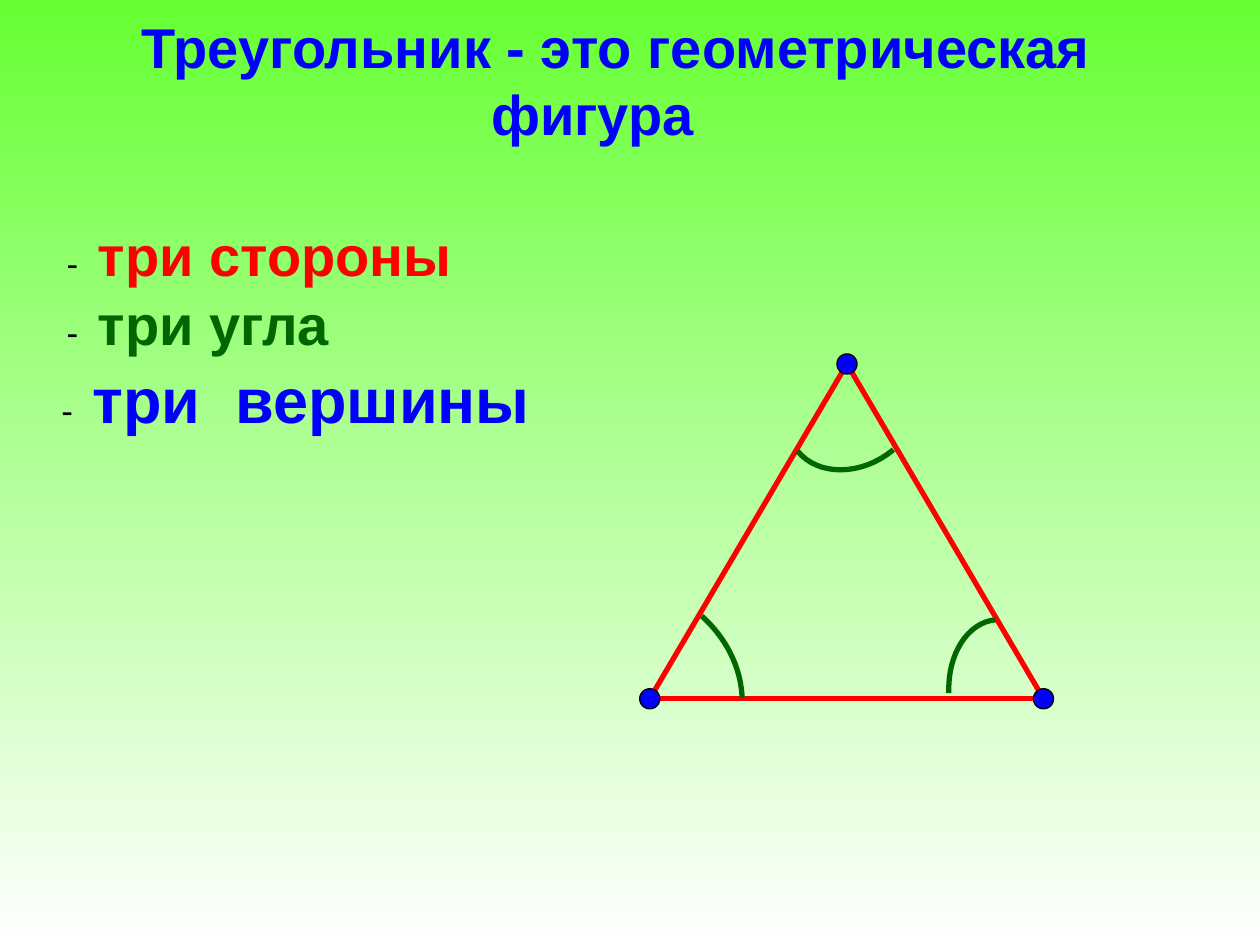
from pptx import Presentation
from pptx.dml.color import RGBColor
from pptx.enum.shapes import MSO_CONNECTOR, MSO_SHAPE
from pptx.enum.text import MSO_ANCHOR, MSO_AUTO_SIZE, PP_ALIGN
from pptx.oxml.xmlchemy import OxmlElement
from pptx.util import Pt

STRAIGHT = MSO_CONNECTOR.STRAIGHT
DOT = MSO_SHAPE.FLOWCHART_CONNECTOR
MIDDLE = MSO_ANCHOR.MIDDLE
FIT_SHAPE = MSO_AUTO_SIZE.SHAPE_TO_FIT_TEXT
CENTER = PP_ALIGN.CENTER

FONT = "Arial"
RED, GREEN, BLUE, BLACK = "FF0000", "006600", "0000FF", "000000"
LINE_WIDTH = 3
DOT_SIZE = 11.5
ARC_STEPS = 16

APEX, RIGHT, LEFT = (484, 208), (596.3, 399.3), (371.3, 399.3)

# Bezier control points of the angle marks
ANGLE_ARCS = [
    [(401, 352), (414.7, 364.3), (423.4, 380.9), (424.1, 398.9)],
    [(542.2, 396), (541.4, 373.7), (553, 355.7), (568.8, 354.2)],
    [(510.5, 257), (492.5, 272.2), (467.3, 272.2), (455.8, 257.8)],
]

# wording, colour, size, left, top, width, height
PROPERTIES = [
    ("три стороны", RED, 32, 31, 122.4, 254, 46),
    ("три угла", GREEN, 32, 31, 162, 172, 46),
    ("три  вершины", BLUE, 36, 28, 202.3, 294, 51),
]


def color(hex_code):
    return RGBColor.from_string(hex_code)


def set_background(slide, top_color, bottom_color):
    fill = slide.background.fill
    fill.gradient()
    fill.gradient_angle = 270
    for stop, hex_code in zip(fill.gradient_stops, (top_color, bottom_color)):
        stop.color.rgb = color(hex_code)


def set_line(shape, hex_code, width):
    shape.line.color.rgb = color(hex_code)
    shape.line.width = Pt(width)


def add_span(para, text, size, hex_code, bold):
    span = para.add_run()
    span.text = text
    span.font.name = FONT
    span.font.size = Pt(size)
    span.font.bold = bold
    span.font.color.rgb = color(hex_code)


def add_title(slide, text):
    box = slide.shapes.add_textbox(Pt(0), Pt(23), Pt(686), Pt(45))
    frame = box.text_frame
    frame.word_wrap = True
    frame.vertical_anchor = MIDDLE
    para = frame.paragraphs[0]
    para.alignment = CENTER
    para._p.get_or_add_pPr().set("indent", str(Pt(18)))
    add_span(para, text, 32, BLUE, True)


def add_property(slide, text, hex_code, size, left, top, width, height):
    box = slide.shapes.add_textbox(Pt(left), Pt(top), Pt(width), Pt(height))
    frame = box.text_frame
    frame.word_wrap = True
    frame.auto_size = FIT_SHAPE
    para = frame.paragraphs[0]
    add_span(para, "-  ", 20, BLACK, False)
    add_span(para, text, size, hex_code, True)


def add_side(slide, start, end):
    ends = [Pt(value) for value in (*start, *end)]
    side = slide.shapes.add_connector(STRAIGHT, *ends)
    set_line(side, RED, LINE_WIDTH)
    side._element.spPr.append(OxmlElement("a:effectLst"))


def bezier_point(controls, t):
    weights = ((1 - t) ** 3, 3 * t * (1 - t) ** 2, 3 * t ** 2 * (1 - t), t ** 3)
    return tuple(
        Pt(sum(weight * value for weight, value in zip(weights, axis)))
        for axis in zip(*controls)
    )


def add_angle_arc(slide, controls):
    points = [bezier_point(controls, i / ARC_STEPS) for i in range(ARC_STEPS + 1)]
    builder = slide.shapes.build_freeform(*points[0])
    builder.add_line_segments(points[1:], close=False)
    arc = builder.convert_to_shape()
    arc.shadow.inherit = False
    arc.fill.background()
    set_line(arc, GREEN, LINE_WIDTH)


def add_vertex(slide, center):
    left, top = (Pt(value - DOT_SIZE / 2) for value in center)
    dot = slide.shapes.add_shape(DOT, left, top, Pt(DOT_SIZE), Pt(DOT_SIZE))
    dot.shadow.inherit = False
    dot.fill.solid()
    dot.fill.fore_color.rgb = color(BLUE)
    set_line(dot, BLACK, 0.75)


def main():
    deck = Presentation()
    deck.slide_width, deck.slide_height = Pt(720), Pt(540)
    slide = deck.slides.add_slide(deck.slide_layouts[6])
    set_background(slide, "66FF33", "FFFFFF")

    add_title(slide, "Треугольник - это геометрическая фигура ")
    for start, end in ((LEFT, RIGHT), (APEX, RIGHT), (APEX, LEFT)):
        add_side(slide, start, end)
    for controls in ANGLE_ARCS:
        add_angle_arc(slide, controls)
    for vertex in (APEX, RIGHT, LEFT):
        add_vertex(slide, vertex)
    for item in PROPERTIES:
        add_property(slide, *item)

    deck.save("out.pptx")


if __name__ == "__main__":
    main()
